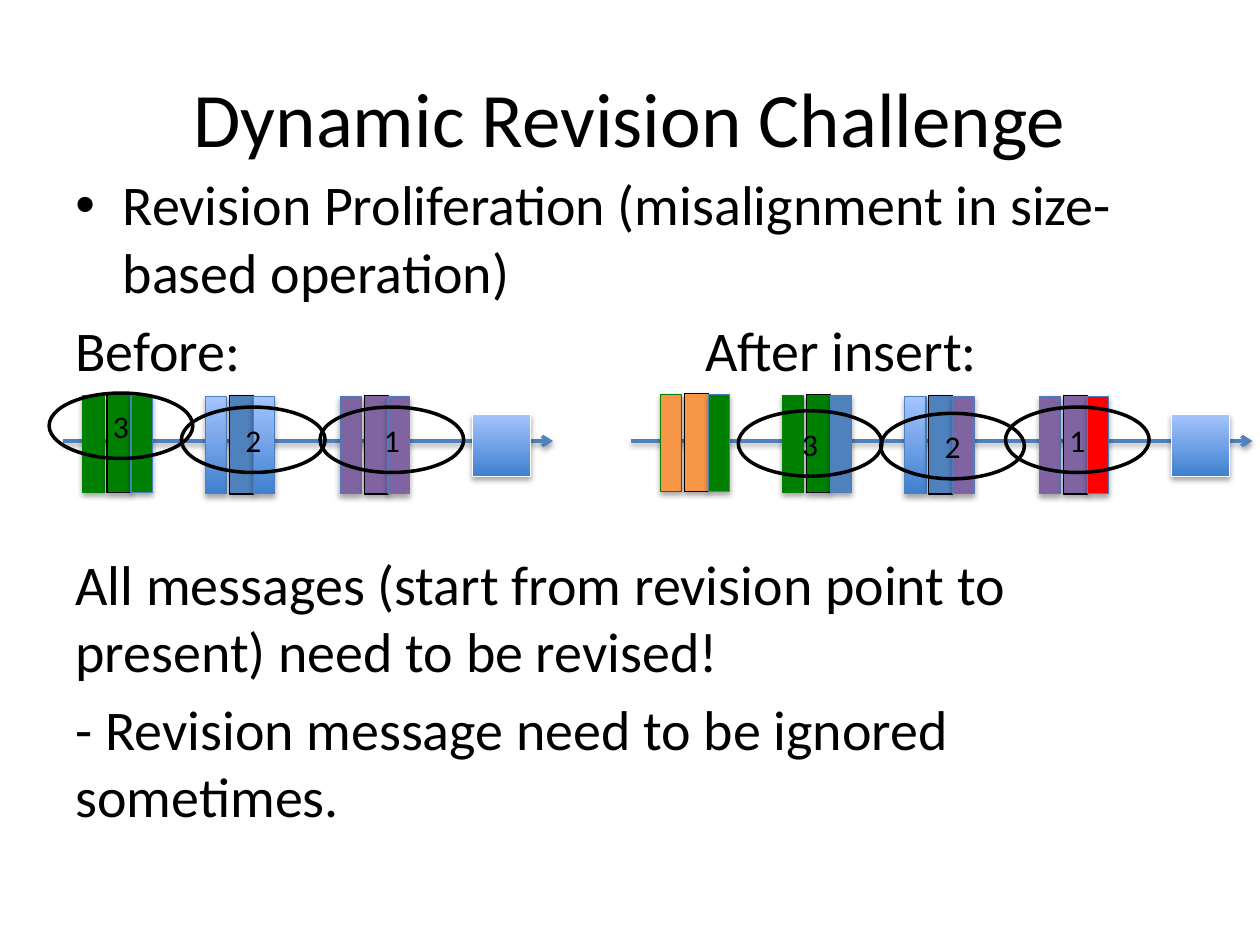
import pptx
import pptx.dml.color
import pptx.enum.shapes
import pptx.enum.text
import pptx.oxml
import pptx.oxml.ns
import pptx.util
import lxml.etree

Pt = pptx.util.Pt
SHAPE = pptx.enum.shapes.MSO_SHAPE
ALIGN = pptx.enum.text.PP_ALIGN
ANCHOR = pptx.enum.text.MSO_ANCHOR
qn = pptx.oxml.ns.qn

COLORS = {
    "black": "000000", "white": "FFFFFF", "green": "008000", "blue": "4F81BD",
    "edge": "4B7EBC", "purple": "8064A2", "red": "FF0000", "orange": "F79646",
    "sky_dark": "3F80CE", "sky_light": "A4C4FF",
}
RGB = {name: pptx.dml.color.RGBColor.from_string(value) for name, value in COLORS.items()}


def add_shadow(part, opacity, distance):
    effects = lxml.etree.SubElement(part._element.spPr, qn("a:effectLst"))
    shadow = lxml.etree.SubElement(
        effects, qn("a:outerShdw"), blurRad=str(Pt(3.15)), dist=str(Pt(distance)),
        dir="5400000", rotWithShape="0")
    color = lxml.etree.SubElement(shadow, qn("a:srgbClr"), val=COLORS["black"])
    lxml.etree.SubElement(color, qn("a:alpha"), val=str(opacity * 1000))


def add_block(left, top, width, height, fill, outline):
    block = slide.shapes.add_shape(SHAPE.RECTANGLE, Pt(left), Pt(top), Pt(width), Pt(height))
    if fill == "sky":
        block.fill.gradient()
        block.fill.gradient_angle = 90
        for stop, shade in zip(block.fill.gradient_stops, ("sky_dark", "sky_light")):
            stop.color.rgb = RGB[shade]
    else:
        block.fill.solid()
        block.fill.fore_color.rgb = RGB[fill]
    block.line.color.rgb = RGB[outline]
    block.line.width = Pt(0.75)
    add_shadow(block, 35, 1.8)


deck = pptx.Presentation()
deck.slide_width, deck.slide_height = Pt(720), Pt(540)
slide = deck.slides.add_slide(deck.slide_layouts[6])

title = slide.shapes.add_textbox(Pt(36), Pt(21.6), Pt(648), Pt(90)).text_frame
title.word_wrap = True
title.vertical_anchor = ANCHOR.MIDDLE
heading = title.paragraphs[0]
heading.text = "Dynamic Revision Challenge"
heading.alignment = ALIGN.CENTER
heading.font.size = Pt(44)
heading.font.name = "Calibri"
heading.font.color.rgb = RGB["black"]

body = slide.shapes.add_textbox(Pt(36), Pt(93.6), Pt(648), Pt(388)).text_frame
body.word_wrap = True
statements = [
    ("Revision Proliferation (misalignment in size-based operation)", 6.4),
    ("Before:\tAfter insert:", 6.4),
    ("All messages (start from revision point to present) need to be revised!", 95),
    ("- Revision message need to be ignored sometimes.", 6.4),
]
for index, (wording, gap) in enumerate(statements):
    statement = body.paragraphs[0] if index == 0 else body.add_paragraph()
    statement.text = wording
    statement.space_before = Pt(gap)
    statement.font.size = Pt(32)
    statement.font.name = "Calibri"
    statement.font.color.rgb = RGB["black"]
    properties = statement._p.get_or_add_pPr()
    if index == 0:
        properties.set("marL", str(Pt(27)))
        properties.set("indent", str(Pt(-27)))
        bullet_font = lxml.etree.Element(qn("a:buFont"), typeface="Arial")
        bullet = lxml.etree.Element(qn("a:buChar"), char="•")
        properties.find(qn("a:defRPr")).addprevious(bullet_font)
        bullet_font.addnext(bullet)
    if "\t" in wording:
        tabs = lxml.etree.Element(qn("a:tabLst"))
        lxml.etree.SubElement(tabs, qn("a:tab"), pos=str(Pt(360)), algn="l")
        properties.find(qn("a:defRPr")).addprevious(tabs)

for start, end in [(36, 316), (360.7, 715.7)]:
    timeline = slide.shapes.add_connector(
        pptx.enum.shapes.MSO_CONNECTOR.STRAIGHT, Pt(start), Pt(252), Pt(end), Pt(252))
    timeline.line.color.rgb = RGB["blue"]
    timeline.line.width = Pt(2)
    lxml.etree.SubElement(timeline.line._ln, qn("a:tailEnd"), type="arrow")
    add_shadow(timeline, 38, 1.6)

messages = [
    (47.5, 226.1, ("green", "green", "green"), "green"),
    (117.4, 226.8, ("sky", "blue", "sky"), "blue"),
    (194.4, 226.8, ("purple", "purple", "purple"), "edge"),
    (447.1, 226.1, ("green", "green", "blue"), "green"),
    (517, 226.8, ("sky", "blue", "purple"), "blue"),
    (594, 226.8, ("purple", "purple", "red"), "edge"),
    (377.3, 225.4, ("orange", "orange", "green"), "green"),
]
for left, top, fills, first_outline in messages:
    for slot, (fill, outline) in enumerate(zip(fills, (first_outline, "black", "edge"))):
        middle = slot == 1
        add_block(left + slot * 13.7, top - 0.7 * middle, 13.7 if middle else 12.2,
                  56.2 if middle else 55.4, fill, outline)

for left in (270, 669.6):
    add_block(left, 236.9, 33.1, 35.3, "sky", "white")

revisions = [
    ("3", 28.1, 224.6), ("2", 103.7, 232.6), ("1", 182.9, 232.6),
    ("1", 574.6, 232.6), ("2", 503.3, 236.2), ("3", 421.9, 234.7),
]
for number, left, top in revisions:
    revision = slide.shapes.add_shape(SHAPE.OVAL, Pt(left), Pt(top), Pt(82.1), Pt(37.4))
    revision.shadow.inherit = False
    revision.fill.background()
    revision.line.color.rgb = RGB["black"]
    revision.line.width = Pt(2)
    revision.text_frame.vertical_anchor = ANCHOR.MIDDLE
    label = revision.text_frame.paragraphs[0]
    label.text = number
    label.alignment = ALIGN.CENTER
    label.font.size = Pt(18)
    label.font.name = "Calibri"
    label.font.color.rgb = RGB["black"]

deck.save("out.pptx")
